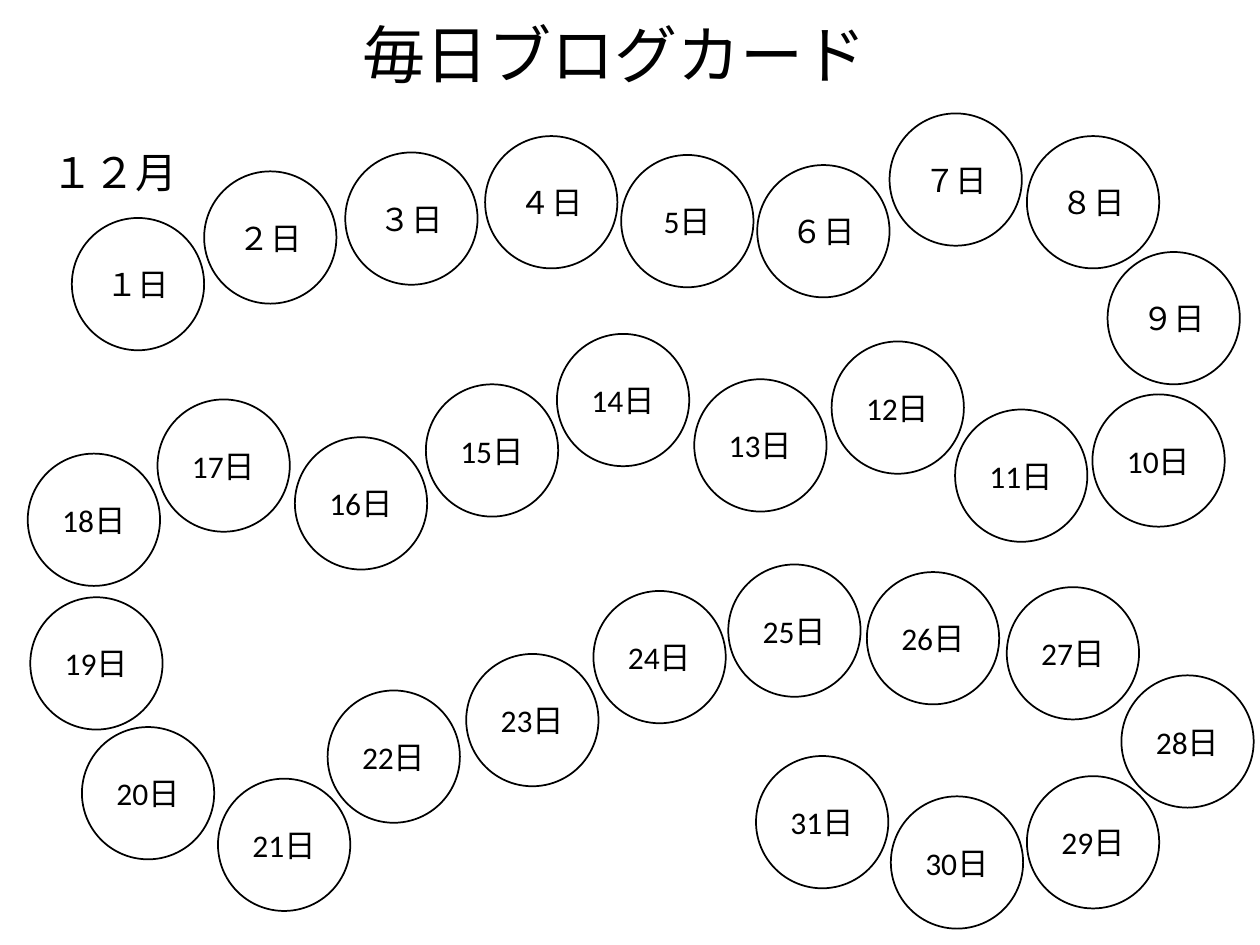
from dataclasses import dataclass

from pptx import Presentation
from pptx.dml.color import RGBColor
from pptx.enum.shapes import MSO_SHAPE
from pptx.enum.text import MSO_ANCHOR, MSO_AUTO_SIZE, PP_ALIGN
from pptx.util import Inches, Pt

OVAL = MSO_SHAPE.OVAL
MIDDLE = MSO_ANCHOR.MIDDLE
GROW = MSO_AUTO_SIZE.SHAPE_TO_FIT_TEXT
CENTER = PP_ALIGN.CENTER


@dataclass(frozen=True)
class Theme:
    font: str = "Calibri"
    ink: RGBColor = RGBColor(0, 0, 0)
    paper: RGBColor = RGBColor(255, 255, 255)
    title_size: int = 36
    month_size: int = 24
    day_size: int = 18
    outline: int = 1


THEME = Theme()

HEADINGS = [
    ("毎日ブログカード", THEME.title_size, (2.78, 0.07, 4.24, 0.71)),
    ("１２月", THEME.month_size, (0.31, 1.11, 1.21, 0.5)),
]
SINGLE_DIGITS = "１２３４5６７８９"
DIAMETER = 1.05
DAY_POSITIONS = [
    (0.57, 1.73), (1.62, 1.36), (2.74, 1.21), (3.85, 1.08), (4.93, 1.23),
    (6.01, 1.31), (7.06, 0.9), (8.15, 1.08), (8.79, 2), (8.67, 3.13),
    (7.58, 3.25), (6.6, 2.71), (5.51, 3.01), (4.42, 2.65), (3.38, 3.05),
    (2.34, 3.47), (1.25, 3.17), (0.22, 3.6), (0.24, 4.74), (0.65, 5.77),
    (1.73, 6.18), (2.6, 5.48), (3.7, 5.19), (4.71, 4.69), (5.78, 4.48),
    (6.88, 4.54), (7.99, 4.66), (8.9, 5.36), (8.15, 6.16), (7.07, 6.32),
    (6, 6),
]


def write_text(frame, text, size):
    para = frame.paragraphs[0]
    para.text = text
    para.font.name = THEME.font
    para.font.size = Pt(size)
    para.font.color.rgb = THEME.ink
    return para


def add_heading(page, text, size, bounds):
    box = page.shapes.add_textbox(*map(Inches, bounds))
    frame = box.text_frame
    frame.word_wrap = False
    frame.auto_size = GROW
    write_text(frame, text, size)


def day_label(day):
    number = SINGLE_DIGITS[day - 1] if day < 10 else day
    return f"{number}日"


def add_day(page, day, left, top):
    circle = page.shapes.add_shape(
        OVAL, Inches(left), Inches(top), Inches(DIAMETER), Inches(DIAMETER)
    )
    circle.shadow.inherit = False
    circle.fill.solid()
    circle.fill.fore_color.rgb = THEME.paper
    circle.line.color.rgb = THEME.ink
    circle.line.width = Pt(THEME.outline)
    frame = circle.text_frame
    frame.margin_left = frame.margin_right = 0
    frame.margin_top = frame.margin_bottom = Inches(0.05)
    frame.vertical_anchor = MIDDLE
    write_text(frame, day_label(day), THEME.day_size).alignment = CENTER


def main():
    deck = Presentation()
    deck.slide_width = Inches(10)
    deck.slide_height = Inches(7.5)
    page = deck.slides.add_slide(deck.slide_layouts[6])
    for heading in HEADINGS:
        add_heading(page, *heading)
    for day, (left, top) in enumerate(DAY_POSITIONS, start=1):
        add_day(page, day, left, top)
    deck.save("out.pptx")


if __name__ == "__main__":
    main()
